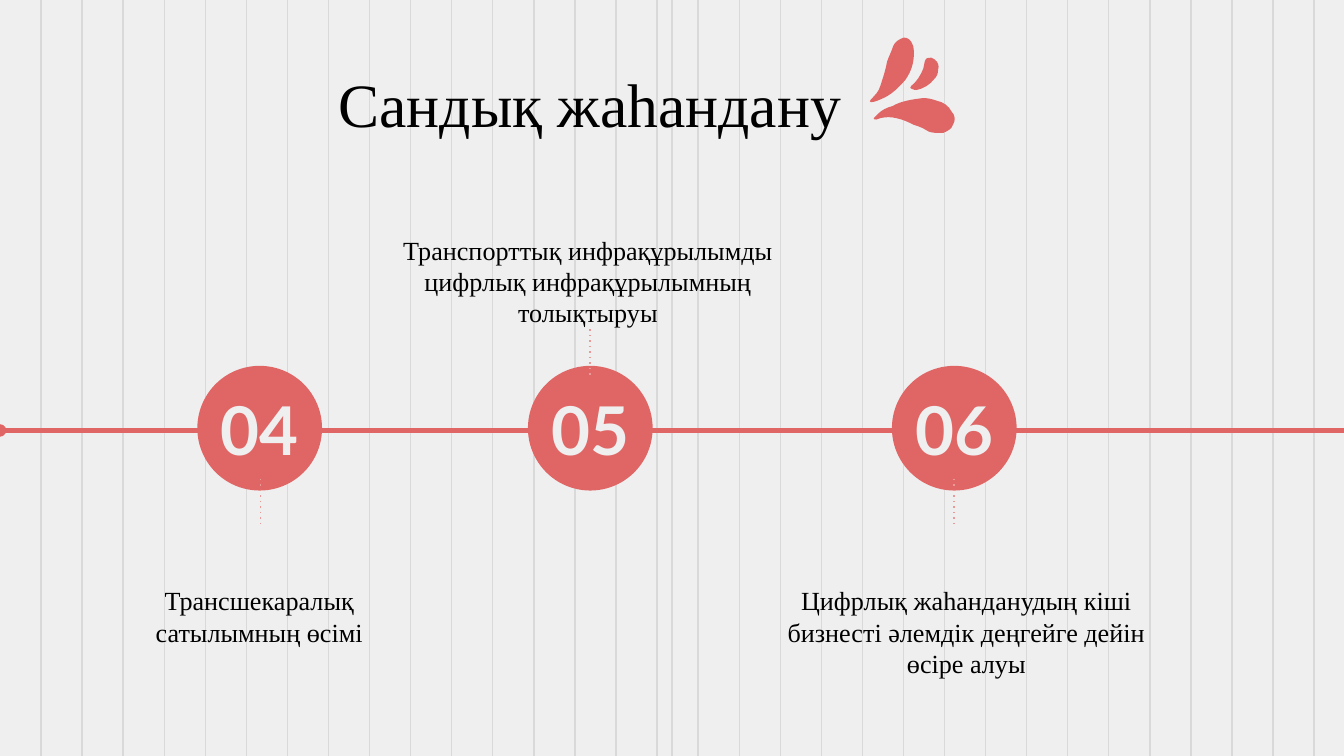
from lxml import etree
from pptx import Presentation
from pptx.dml.color import RGBColor
from pptx.enum import shapes, text
from pptx.oxml import ns
from pptx.util import Pt

COLORS = {"paper": "EFEFEF", "rule": "D9D9D9", "coral": "E06666",
          "stem": "EA9999", "ink": "000000"}


def write(frame, content, font="Times New Roman", size=14, color="ink", bold=False,
          align=text.PP_ALIGN.CENTER, anchor=text.MSO_ANCHOR.TOP,
          fit=text.MSO_AUTO_SIZE.NONE):
    frame.word_wrap = True
    frame.auto_size = fit
    frame.vertical_anchor = anchor
    frame.margin_left = frame.margin_right = Pt(7.2)
    frame.margin_top = frame.margin_bottom = Pt(7.2)
    paragraph = frame.paragraphs[0]
    paragraph.alignment = align
    paragraph.line_spacing = 1.0
    run = paragraph.add_run()
    run.text = content
    run.font.name = font
    run.font.size = Pt(size)
    run.font.bold = bold
    run.font.color.rgb = RGBColor.from_string(COLORS[color])


def draw_line(x1, y1, x2, y2, color, width=0.75):
    line = slide.shapes.add_connector(
        shapes.MSO_CONNECTOR.STRAIGHT, Pt(x1), Pt(y1), Pt(x2), Pt(y2))
    line.line.color.rgb = RGBColor.from_string(COLORS[color])
    line.line.width = Pt(width)
    etree.SubElement(line._element.spPr, ns.qn("a:effectLst"))
    return line


prs = Presentation()
prs.slide_width, prs.slide_height = Pt(720), Pt(405)
layout = prs.slide_layouts[5]
slide = prs.slides.add_slide(layout)
slide.background.fill.solid()
slide.background.fill.fore_color.rgb = RGBColor.from_string(COLORS["paper"])

# Ruled background, kept on the layout: a line every 22 pt, plus one in the middle
for number, x in enumerate([22 * n for n in range(1, 33)] + [360]):
    rule = draw_line(x, -0.5, x, 405.5, "rule")
    rule._element.nvCxnSpPr.cNvPr.set("id", str(100 + number))
    layout.shapes._spTree.append(rule._element)

# Timeline axis with a round start
axis = draw_line(0, 230.6, 720, 230.6, "coral", 2.25)
etree.SubElement(axis.line._get_or_add_ln(), ns.qn("a:headEnd"), type="oval")

# Title
title = slide.shapes.title
title.left, title.top, title.width, title.height = Pt(174.2), Pt(28.1), Pt(286.6), Pt(45.4)
write(title.text_frame, "Сандық жаһандану", size=33, align=text.PP_ALIGN.LEFT)

# Milestones: number, circle centre, stem x and top, caption box and text
milestones = [
    ("04", 139.1, 139.7, 256.5, (58.3, 306, 161.3, 48.2),
     "Трансшекаралық сатылымның өсімі"),
    ("05", 316.2, 316.1, 176.4, (202.3, 118.1, 225.4, 65.5),
     "Транспорттық инфрақұрылымды цифрлық инфрақұрылымның толықтыруы"),
    ("06", 511.2, 511.1, 256.5, (399.6, 306, 236.2, 65.5),
     "Цифрлық жаһанданудың кіші бизнесті әлемдік деңгейге дейін өсіре алуы"),
]
for number, center, stem_x, stem_top, caption_box, caption in milestones:
    circle = slide.shapes.add_shape(
        shapes.MSO_SHAPE.OVAL, Pt(center - 33.4), Pt(196), Pt(66.8), Pt(66.8))
    circle.shadow.inherit = False
    circle.fill.solid()
    circle.fill.fore_color.rgb = RGBColor.from_string(COLORS["coral"])
    circle.line.fill.background()

    label = slide.shapes.add_textbox(Pt(center - 43.9), Pt(194), Pt(87.8), Pt(71.3))
    write(label.text_frame, number, font="Lato", size=36, color="paper", bold=True,
          anchor=text.MSO_ANCHOR.MIDDLE)

    note = slide.shapes.add_textbox(*map(Pt, caption_box))
    write(note.text_frame, caption, fit=text.MSO_AUTO_SIZE.SHAPE_TO_FIT_TEXT)

    stem = draw_line(stem_x, stem_top, stem_x, stem_top + 24.7, "stem")
    etree.SubElement(stem.line._get_or_add_ln(), ns.qn("a:prstDash"), val="dot")

# Petals beside the title: cubic curves on a 0.72 pt grid,
# a start point and then two control points and an end point per curve
petals = [
    [(678, 66), (680, 67), (681, 67), (682, 67), (687, 66), (692, 63), (695, 59),
     (697, 57), (698, 55), (698, 52), (699, 49), (698, 46), (695, 44),
     (694, 43), (694, 43), (693, 43), (690, 43), (689, 43), (688, 46),
     (687, 48), (687, 49), (687, 51), (685, 56), (682, 61), (678, 64),
     (677, 65), (677, 66), (678, 66)],
    [(704, 98), (706, 97), (708, 96), (709, 93), (711, 90), (711, 86), (708, 83),
     (706, 79), (702, 76), (697, 75), (694, 74), (691, 73), (687, 73),
     (679, 74), (671, 75), (664, 79), (660, 80), (656, 82), (653, 85),
     (652, 86), (651, 87), (650, 88), (650, 89), (651, 89), (652, 89),
     (653, 88), (654, 88), (655, 88), (659, 87), (663, 87), (667, 88),
     (672, 89), (676, 91), (680, 93), (684, 94), (688, 96), (691, 98),
     (694, 99), (697, 99), (700, 99), (701, 99), (703, 99), (704, 98)],
    [(655, 74), (663, 71), (669, 65), (674, 59), (678, 53), (680, 47), (680, 40),
     (680, 38), (680, 35), (679, 33), (679, 32), (678, 32), (678, 31),
     (676, 28), (673, 27), (670, 29), (666, 31), (665, 33), (664, 36),
     (663, 39), (661, 43), (660, 46), (659, 52), (657, 58), (655, 64),
     (654, 68), (651, 71), (648, 74), (647, 75), (647, 76), (648, 76),
     (650, 76), (653, 75), (655, 74)],
]
for points in petals:
    builder = slide.shapes.build_freeform(*points[0], scale=Pt(0.72))
    builder.add_line_segments(points[1:], close=False)
    petal = builder.convert_to_shape()
    petal.shadow.inherit = False
    petal.fill.solid()
    petal.fill.fore_color.rgb = RGBColor.from_string(COLORS["coral"])
    petal.line.fill.background()

    # Turn every three straight segments into one cubic curve
    outline = petal._element.find(".//" + ns.qn("a:path"))
    segments = outline.findall(ns.qn("a:lnTo"))
    for first in range(0, len(segments), 3):
        curve = etree.SubElement(outline, ns.qn("a:cubicBezTo"))
        for segment in segments[first:first + 3]:
            curve.append(segment[0])
            outline.remove(segment)
    etree.SubElement(outline, ns.qn("a:close"))

prs.save("out.pptx")
